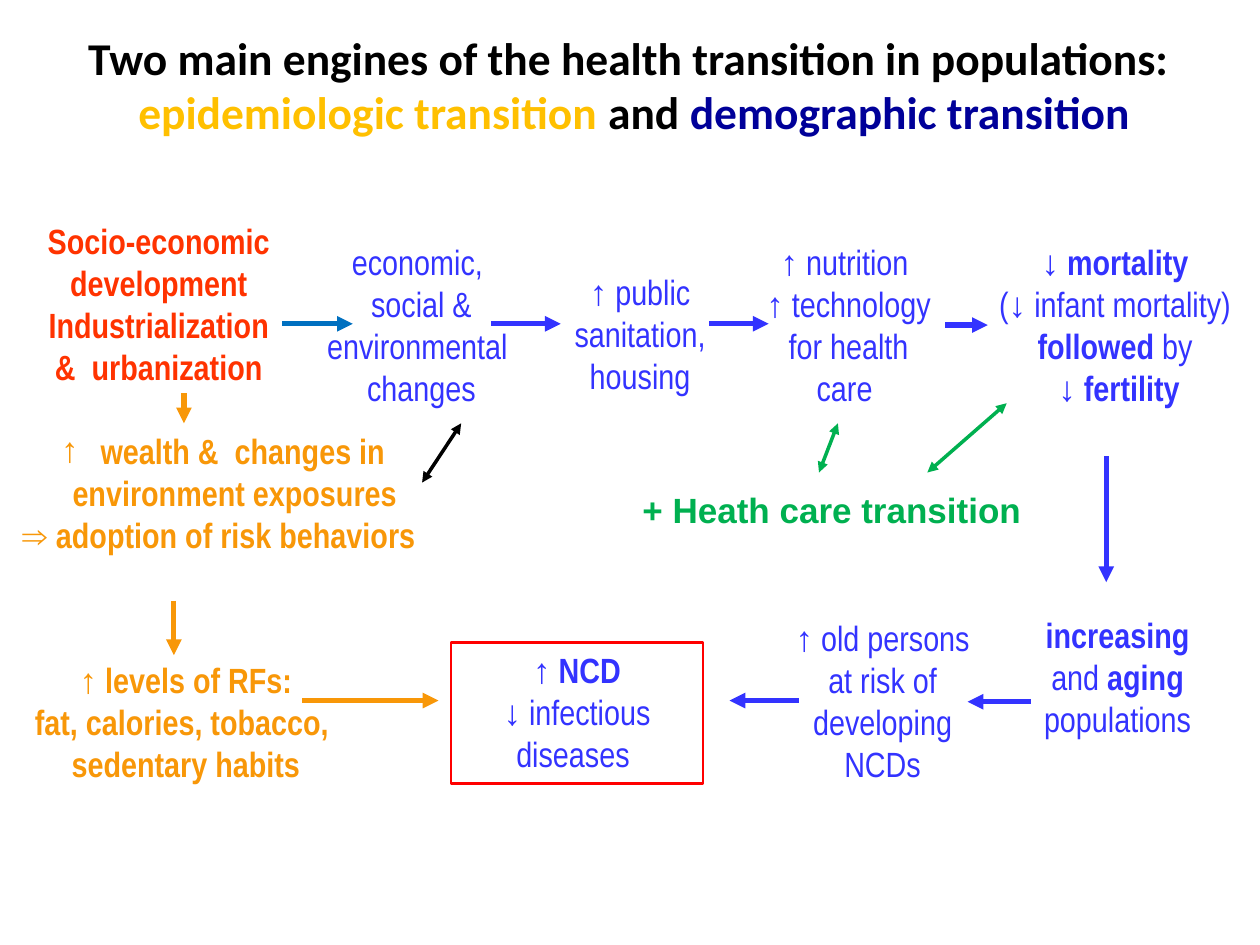
from dataclasses import dataclass

from lxml import etree
from pptx import Presentation
from pptx import util as u
from pptx.dml.color import RGBColor
from pptx.enum import shapes, text
from pptx.oxml.ns import qn


@dataclass(frozen=True)
class Theme:
    black: str = "000000"
    gold: str = "FFC000"
    navy: str = "000099"
    violet: str = "3333FF"
    orange: str = "F89708"
    vermilion: str = "FF3300"
    red: str = "FF0000"
    blue: str = "0070C0"
    green: str = "00B050"
    title_font: str = "Calibri"
    body_font: str = "Arial Narrow"
    plain_font: str = "Arial"
    title_size: int = 26
    body_size: int = 20
    thick: float = 3
    thin: float = 2
    border: float = 1.5


THEME = Theme()

STEPS = [
    ((2.48, 1.86, 1.73, 1.43), THEME.violet, ["economic,  social & environmental  changes"]),
    ((4.37, 2.1, 1.42, 1.11), THEME.violet, ["↑ public sanitation, housing"]),
    ((5.95, 1.86, 1.57, 1.43), THEME.violet, ["↑ nutrition ", "↑ technology for health care "]),
    ((8.17, 4.82, 1.4, 1.1), THEME.violet, ["*increasing* and *aging* populations"]),
    ((6.18, 4.84, 1.65, 1.43), THEME.violet, ["↑ old persons at risk of developing NCDs"]),
    ((0.27, 1.69, 1.98, 1.43), THEME.vermilion,
     ["*Socio-economic development*", "*Industrialization &  urbanization*"]),
]

UNWRAPPED_STEPS = [
    ((7.82, 1.86, 2.06, 1.43), THEME.violet,
     ["*↓ mortality*", "(↓ infant mortality)", "*followed* by", " *↓ fertility*"]),
    ((0.17, 5.18, 2.61, 1.11), THEME.orange,
     ["*↑ levels of RFs:*", "*fat, calories, tobacco, *", "*sedentary habits*"]),
]

FLOWS = [
    ((2.24, 2.57), (2.8, 2.57), THEME.blue),
    ((3.9, 2.57), (4.45, 2.57), THEME.violet),
    ((5.63, 2.57), (6.1, 2.57), THEME.violet),
    ((7.5, 2.58), (7.84, 2.58), THEME.violet),
    ((8.78, 3.62), (8.78, 4.62), THEME.violet),
    ((8.18, 5.57), (7.68, 5.57), THEME.violet),
    ((6.34, 5.56), (5.79, 5.56), THEME.violet),
    ((1.46, 3.12), (1.46, 3.36), THEME.orange),
    ((1.38, 4.77), (1.38, 5.2), THEME.orange),
    ((2.4, 5.56), (3.48, 5.56), THEME.orange),
]

LINKS = [
    ((3.35, 3.83), (3.66, 3.36), THEME.black),
    ((6.5, 3.75), (6.65, 3.36), THEME.green),
    ((7.36, 3.75), (7.99, 3.2), THEME.green),
]


def inches(values):
    return [u.Inches(value) for value in values]


def format_run(run, font, size, color, bold):
    run.font.name = font
    run.font.size = u.Pt(size)
    run.font.bold = bold
    run.font.color.rgb = RGBColor.from_string(color)


def write_lines(shape, lines, color, font=THEME.body_font, wrap=True,
                align=text.PP_ALIGN.CENTER):
    frame = shape.text_frame
    frame.word_wrap = wrap
    frame.vertical_anchor = text.MSO_ANCHOR.TOP
    frame.text = "\n".join(line.split("*")[0] for line in lines)
    for paragraph, line in zip(frame.paragraphs, lines):
        paragraph.text = ""
        paragraph.alignment = align
        for index, part in enumerate(line.split("*")):
            if part:
                run = paragraph.add_run()
                run.text = part
                format_run(run, font, THEME.body_size, color, index % 2 == 1)


def add_label(slide, box, color, lines, **options):
    shape = slide.shapes.add_textbox(*inches(box))
    write_lines(shape, lines, color, **options)
    return shape


def add_title(slide):
    shape = slide.shapes.add_textbox(*inches((0.27, 0.21, 9.53, 0.92)))
    frame = shape.text_frame
    frame.word_wrap = True
    frame.vertical_anchor = text.MSO_ANCHOR.MIDDLE
    paragraph = frame.paragraphs[0]
    paragraph.text = "Two main engines of the health transition in populations: \v"
    paragraph.alignment = text.PP_ALIGN.CENTER
    for part in ("epidemiologic transition ", "and ", "demographic transition"):
        paragraph.add_run().text = part
    colors = (THEME.black, THEME.gold, THEME.black, THEME.navy)
    for run, color in zip(paragraph.runs, colors):
        format_run(run, THEME.title_font, THEME.title_size, color, True)


def add_outcome(slide):
    shape = slide.shapes.add_shape(
        shapes.MSO_SHAPE.RECTANGLE, *inches((3.58, 5.1, 2, 1.12)))
    shape.shadow.inherit = False
    shape.fill.background()
    shape.line.color.rgb = RGBColor.from_string(THEME.red)
    shape.line.width = u.Pt(THEME.border)
    write_lines(shape, ["*↑ NCD*", "↓ infectious diseases "], THEME.violet)


def add_bullet(paragraph, character, indent):
    properties = paragraph._p.get_or_add_pPr()
    properties.set("marL", str(u.Inches(indent)))
    properties.set("indent", str(-u.Inches(indent)))
    font = etree.SubElement(properties, qn("a:buFont"))
    font.set("typeface", THEME.plain_font)
    etree.SubElement(properties, qn("a:buChar")).set("char", character)


def add_arrow(slide, start, end, color, width, ends):
    connector = slide.shapes.add_connector(
        shapes.MSO_CONNECTOR.STRAIGHT, *inches(start + end))
    connector.line.color.rgb = RGBColor.from_string(color)
    connector.line.width = u.Pt(width)
    line = connector.line._get_or_add_ln()
    for name in ends:
        etree.SubElement(line, qn(name)).set("type", "triangle")
    etree.SubElement(connector._element.spPr, qn("a:effectLst"))


def main():
    presentation = Presentation()
    presentation.slide_width = u.Inches(10)
    presentation.slide_height = u.Inches(7.5)
    slide = presentation.slides.add_slide(presentation.slide_layouts[6])

    add_title(slide)
    for box, color, lines in STEPS:
        add_label(slide, box, color, lines)
    for box, color, lines in UNWRAPPED_STEPS:
        add_label(slide, box, color, lines, wrap=False)
    add_outcome(slide)
    wealth = add_label(slide, (0, 3.36, 3.54, 1.11), THEME.orange, [
        "* wealth &  changes in environment exposures *",
        "*⇒ adoption of risk behaviors *",
    ])
    add_bullet(wealth.text_frame.paragraphs[0], "↑", 0.25)
    add_label(slide, (5, 3.83, 3.23, 0.44), THEME.green, ["*+ Heath care transition*"],
              font=THEME.plain_font, wrap=False, align=text.PP_ALIGN.LEFT)
    for start, end, color in FLOWS:
        add_arrow(slide, start, end, color, THEME.thick, ["a:tailEnd"])
    for start, end, color in LINKS:
        add_arrow(slide, start, end, color, THEME.thin, ["a:headEnd", "a:tailEnd"])

    presentation.save("out.pptx")


if __name__ == "__main__":
    main()
